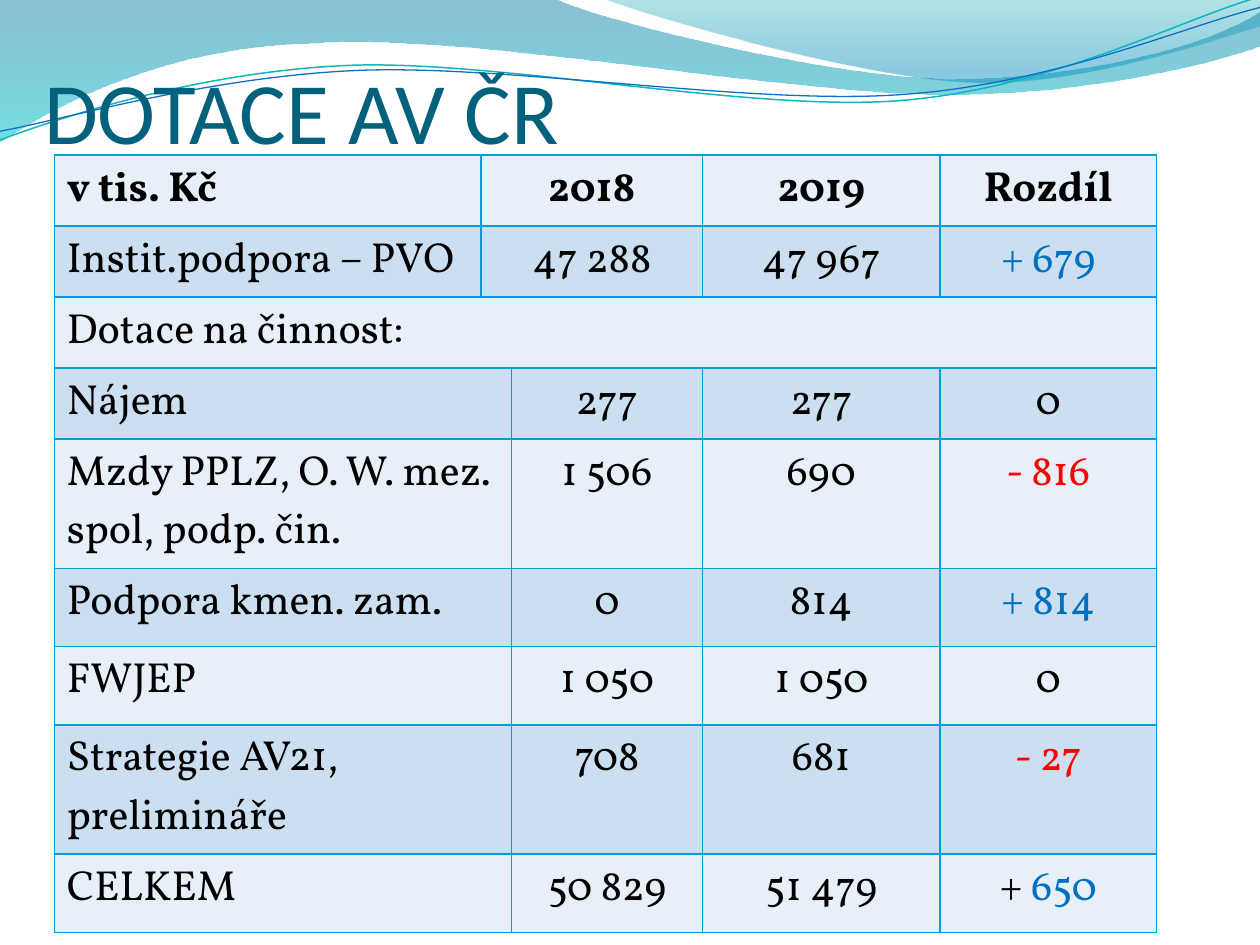
from lxml import etree
from pptx import Presentation
from pptx.dml.color import RGBColor
from pptx.enum import text as t
from pptx.oxml import parse_xml
from pptx.oxml.ns import nsdecls, qn
from pptx.util import Pt

HUES = {
    "title": "04617B", "ink": "000000", "up": "0070C0", "down": "FF0000",
    "light": "E7EFF8", "dark": "CCDFF1", "edge": "009DD9",
    "teal": "0AB8BF", "blue": "0F6FC6",
}
# Gradient stops: position, colour, opacity in percent
BAND = [(0, "0074A1", 45), (100, "00C6CF", 55)]
GLOW = [(0, "00A1A9", 30), (80, "008BBF", 45)]

COLS = [244, 11.5, 109.2, 135.8, 123.6]
TALLS = [14, 37, 32, 39] + [44.7] * 5
ROWS = [
    ("v tis. Kč", "2018", "2019", "Rozdíl"),
    ("Instit.podpora – PVO", "47 288", "47 967", "+ 679"),
    ("Dotace na činnost:",),
    ("Nájem", "277", "277", "0"),
    ("Mzdy PPLZ, O. W. mez. spol, podp. čin.", "1 506", "690", "- 816"),
    ("Podpora kmen. zam.", "0", "814", "+ 814"),
    ("FWJEP", "1 050", "1 050", "0"),
    ("Strategie AV21, prelimináře", "708", "681", "- 27"),
    ("CELKEM", "50 829", "51 479", "+ 650"),
]


def rgb(name):
    return RGBColor.from_string(HUES[name])


def write(frame, words, size=24, font="Vollkorn", hue="ink", bold=False, align=t.PP_ALIGN.LEFT):
    """Add a formatted run to the first paragraph of a text frame."""
    para = frame.paragraphs[0]
    para.alignment = align
    run = para.add_run()
    run.text = words
    run.font.size, run.font.name, run.font.bold = Pt(size), font, bold
    run.font.color.rgb = rgb(hue)


def trace(slide, box, start, parts, close):
    """Draw an outline of points (two numbers) and curves (six numbers)."""
    left, top = box
    flat = list(start) + [n for part in parts for n in part]
    spots = [((left + x) * 100, (top + y) * 100) for x, y in zip(flat[::2], flat[1::2])]
    pen = slide.shapes.build_freeform(*spots[0], scale=Pt(1) / 100)
    pen.add_line_segments(spots[1:], close=close)
    shape = pen.convert_to_shape()
    shape.shadow.inherit = False
    # Join each three points of a curve into one cubic segment
    legs = iter(list(shape.element.iter(qn("a:lnTo"))))
    for part in parts:
        group = [next(legs) for _ in range(len(part) // 2)]
        if len(group) == 3:
            curve = etree.Element(qn("a:cubicBezTo"))
            group[0].addprevious(curve)
            for leg in group:
                curve.append(leg[0])
                leg.getparent().remove(leg)
    return shape


def shade(shape, stops):
    """Give a shape a see-through gradient from top to bottom."""
    shape.line.fill.background()
    marks = "".join(
        f'<a:gs pos="{pos * 1000}"><a:srgbClr val="{hue}">'
        f'<a:alpha val="{alpha * 1000}"/></a:srgbClr></a:gs>'
        for pos, hue, alpha in stops)
    grad = parse_xml(f'<a:gradFill {nsdecls("a")} rotWithShape="1"><a:gsLst>{marks}</a:gsLst>'
                     '<a:lin ang="5400000" scaled="0"/></a:gradFill>')
    shape.element.spPr.find(qn("a:custGeom")).addnext(grad)


def add_waves(slide, box):
    shade(trace(slide, box, (0, 0), [
        (317, -0.7), (343, 12, 478, 45, 546, 45), (614, 45, 690, 27, 720, 6.5),
        (720.7, 26), (708, 32, 626, 55, 537, 54), (448, 54, 275, 20, 185, 24.5),
        (93, 26, 33, 60, -0.7, 81.4)], True), BAND)
    shade(trace(slide, box, (345, -0.7), [
        (366, 8, 491, 44.6, 554, 47), (616, 49.7, 692, 23, 720, 15), (720, 0)], True), GLOW)
    lines = [
        ("teal", 0.85, (0, 80), [(34.5, 67, 114, 41, 199, 37.4), (284, 34, 427, 64, 513, 57.6),
                                 (600, 51, 675, 11, 718.5, -1.4)]),
        ("blue", 0.75, (0, 75), [(34, 69, 118, 44, 204, 40.3), (290, 36.7, 430, 60.5, 516, 54),
                                 (602, 48, 677, 15, 720, 4.3)]),
    ]
    for hue, width, start, parts in lines:
        wave = trace(slide, box, start, parts, False)
        wave.fill.background()
        wave.line.color.rgb = rgb(hue)
        wave.line.width = Pt(width)


def set_title(slide, box, words):
    title = slide.shapes.title
    title.left, title.top, title.width, title.height = map(Pt, box)
    frame = title.text_frame
    frame.word_wrap = True
    frame.auto_size = t.MSO_AUTO_SIZE.NONE
    frame.vertical_anchor = t.MSO_ANCHOR.BOTTOM
    frame.margin_left = frame.margin_right = frame.margin_bottom = 0
    frame.margin_top = Pt(3.6)
    write(frame, words, size=50, font="Calibri", hue="title")
    # Bring the title in front of the waves
    slide.shapes.element.append(title.element)


def paint(cell, hue):
    """Set the borders and fill of a cell."""
    props = cell._tc.get_or_add_tcPr()
    for side in "LRTB":
        line = etree.SubElement(props, qn(f"a:ln{side}"), w=str(Pt(1)))
        fill = etree.SubElement(line, qn("a:solidFill"))
        etree.SubElement(fill, qn("a:srgbClr"), val=HUES["edge"])
    cell.fill.solid()
    cell.fill.fore_color.rgb = rgb(hue)


def fill_row(table, r, words):
    for c in range(len(COLS)):
        paint(table.cell(r, c), "dark" if r % 2 else "light")
    # The narrow second column joins the figures above and the labels below
    first, last = (0, 4) if len(words) == 1 else (1, 2) if r < 2 else (0, 1)
    table.cell(r, first).merge(table.cell(r, last))
    spots = [c for c in range(len(COLS)) if not first < c <= last]
    for c, word in zip(spots, words):
        frame = table.cell(r, c).text_frame
        look = {"bold": r == 0, "align": t.PP_ALIGN.CENTER if c else t.PP_ALIGN.LEFT}
        hue = {"+": "up", "-": "down"}.get(word[0], "ink")
        if hue == "up" and r == len(ROWS) - 1:
            write(frame, word[:2], **look)
            word = word[2:]
        write(frame, word, hue=hue, **look)


def add_grid(slide, box):
    left, top = box
    table = slide.shapes.add_table(len(ROWS), len(COLS), Pt(left), Pt(top),
                                   Pt(sum(COLS)), Pt(sum(TALLS))).table
    for col, width in zip(table.columns, COLS):
        col.width = Pt(width)
    for r, (tall, words) in enumerate(zip(TALLS, ROWS)):
        table.rows[r].height = Pt(tall)
        fill_row(table, r, words)


def main():
    deck = Presentation()
    deck.slide_width, deck.slide_height = Pt(720), Pt(540)
    slide = deck.slides.add_slide(deck.slide_layouts[5])
    add_waves(slide, (0, 0))
    set_title(slide, (25.2, 2.7, 694.8, 90), "DOTACE AV ČR")
    add_grid(slide, (31, 88.5))
    deck.save("out.pptx")


if __name__ == "__main__":
    main()
